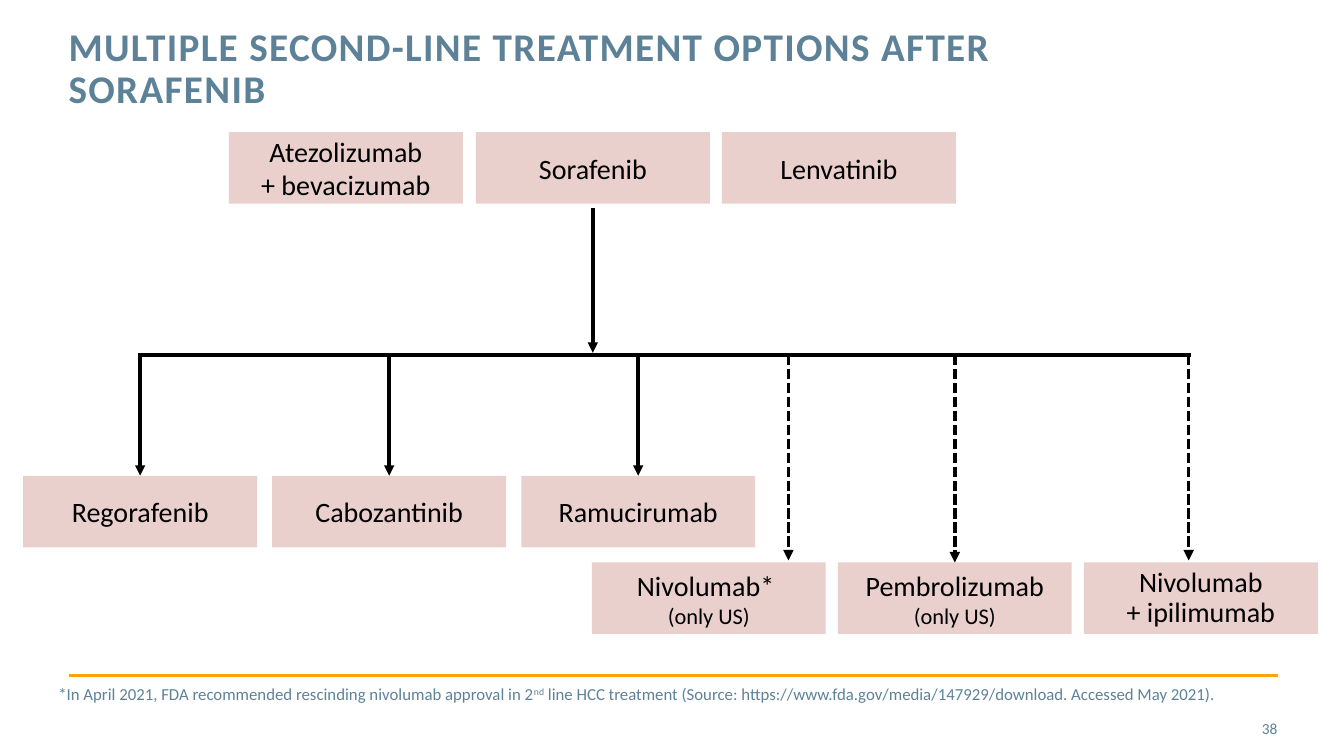
"""Build the slide on second-line treatment options after sorafenib."""
from lxml import etree
from pptx import Presentation
from pptx import util as u
from pptx.dml.color import RGBColor
from pptx.enum import dml, shapes, text
from pptx.oxml.ns import qn

BLACK, SLATE, ROSE, AMBER = "000000", "5D8298", "E9D0CD", "FFA402"
BOX_W, BOX_H = 2.32, 0.71
FIRST_TOP, APPROVED_TOP, US_TOP, BAR_Y = 1.31, 4.72, 5.58, 3.52

deck = Presentation()
deck.slide_width, deck.slide_height = u.Inches(13.33), u.Inches(7.5)
slide = deck.slides.add_slide(deck.slide_layouts[6])


def add_run(paragraph, wording, size, color):
    run = paragraph.add_run()
    run.text = wording
    run.font.name, run.font.size = "Calibri", u.Pt(size)
    run.font.color.rgb = RGBColor.from_string(color)
    return run


def add_line(x1, y1, x2, y2, color=BLACK, width=2.5, arrow=False, dashed=False):
    line = slide.shapes.add_connector(
        shapes.MSO_CONNECTOR.STRAIGHT,
        u.Inches(x1), u.Inches(y1), u.Inches(x2), u.Inches(y2))
    line.line.color.rgb = RGBColor.from_string(color)
    line.line.width = u.Pt(width)
    if dashed:
        line.line.dash_style = dml.MSO_LINE.SQUARE_DOT
    if arrow:
        etree.SubElement(line.line._get_or_add_ln(), qn("a:tailEnd"), type="triangle")
    etree.SubElement(line._element.spPr, qn("a:effectLst"))
    return line


add_line(0.68, 6.7, 12.68, 6.7, AMBER, 2)

title = slide.shapes.add_textbox(
    u.Inches(0.68), u.Inches(0.27), u.Inches(9.56), u.Inches(0.88)).text_frame
page = slide.shapes.add_textbox(
    u.Inches(11.81), u.Inches(7.03), u.Inches(0.86), u.Inches(0.4)).text_frame
for frame in (title, page):
    frame.word_wrap = True
    frame.margin_left = frame.margin_right = frame.margin_top = frame.margin_bottom = 0

title.paragraphs[0].line_spacing = u.Pt(30)
heading = add_run(title.paragraphs[0],
                  "MULTIPLE SECOND-LINE TREATMENT OPTIONS AFTER SORAFENIB", 28, SLATE)
heading.font.bold = True
heading.font._element.set("spc", "100")

page.vertical_anchor = text.MSO_ANCHOR.MIDDLE
page.paragraphs[0].alignment = text.PP_ALIGN.RIGHT
add_run(page.paragraphs[0], "38", 11, SLATE)

drugs = [
    (2.27, FIRST_TOP, ["Atezolizumab", "+ bevacizumab"], ""),
    (4.72, FIRST_TOP, ["Sorafenib"], ""),
    (7.16, FIRST_TOP, ["Lenvatinib"], ""),
    (0.23, APPROVED_TOP, ["Regorafenib"], ""),
    (2.7, APPROVED_TOP, ["Cabozantinib"], ""),
    (5.17, APPROVED_TOP, ["Ramucirumab"], ""),
    (5.87, US_TOP, ["Nivolumab* "], "(only US)"),
    (8.31, US_TOP, ["Pembrolizumab"], "(only US)"),
    (10.75, US_TOP, ["Nivolumab", "+ ipilimumab"], ""),
]
drug_boxes = {}
for left, top, names, region in drugs:
    box = slide.shapes.add_shape(
        shapes.MSO_SHAPE.RECTANGLE,
        u.Inches(left), u.Inches(top), u.Inches(BOX_W), u.Inches(BOX_H))
    box.shadow.inherit = False
    box.fill.solid()
    box.fill.fore_color.rgb = RGBColor.from_string(ROSE)
    box.line.fill.background()
    label = box.text_frame
    label.word_wrap = True
    label.vertical_anchor = text.MSO_ANCHOR.MIDDLE
    label.margin_left = label.margin_right = label.margin_top = label.margin_bottom = 0
    drug = label.paragraphs[0]
    drug.alignment = text.PP_ALIGN.CENTER
    for row, name in enumerate(names):
        if row:
            drug.add_line_break()
        add_run(drug, name, 20, BLACK)
    if top == US_TOP and len(names) > 1:
        drug.line_spacing = 0.9
    if region:
        note = label.add_paragraph()
        note.alignment = text.PP_ALIGN.CENTER
        add_run(note, region, 16, BLACK)
    drug_boxes[names[-1]] = box

add_line(1.37, BAR_Y, 11.81, BAR_Y)
add_line(5.88, 2.06, 5.88, 3.5, arrow=True)
for name in ("Regorafenib", "Cabozantinib", "Ramucirumab", "Pembrolizumab"):
    box = drug_boxes[name]
    center = (box.left + box.width / 2) / u.Inches(1)
    branch = add_line(center, BAR_Y, center, box.top / u.Inches(1),
                      arrow=True, dashed=name == "Pembrolizumab")
    branch.end_connect(box, 0)
for branch_x in (7.82, 11.79):
    add_line(branch_x, BAR_Y, branch_x, 5.56, arrow=True, dashed=True)

footnote = slide.shapes.add_textbox(
    u.Inches(0.48), u.Inches(6.73), u.Inches(11.77), u.Inches(0.5)).text_frame
footnote.word_wrap = False
remark = footnote.paragraphs[0]
add_run(remark, "*In April 2021, FDA recommended rescinding nivolumab approval in 2", 12, SLATE)
ordinal = add_run(remark, "nd", 12, SLATE)
ordinal.font._element.set("baseline", "30000")
add_run(remark, " line HCC treatment (Source: https://www.fda.gov/media/147929/download. "
        "Accessed May 2021).", 12, SLATE)

deck.save("out.pptx")
